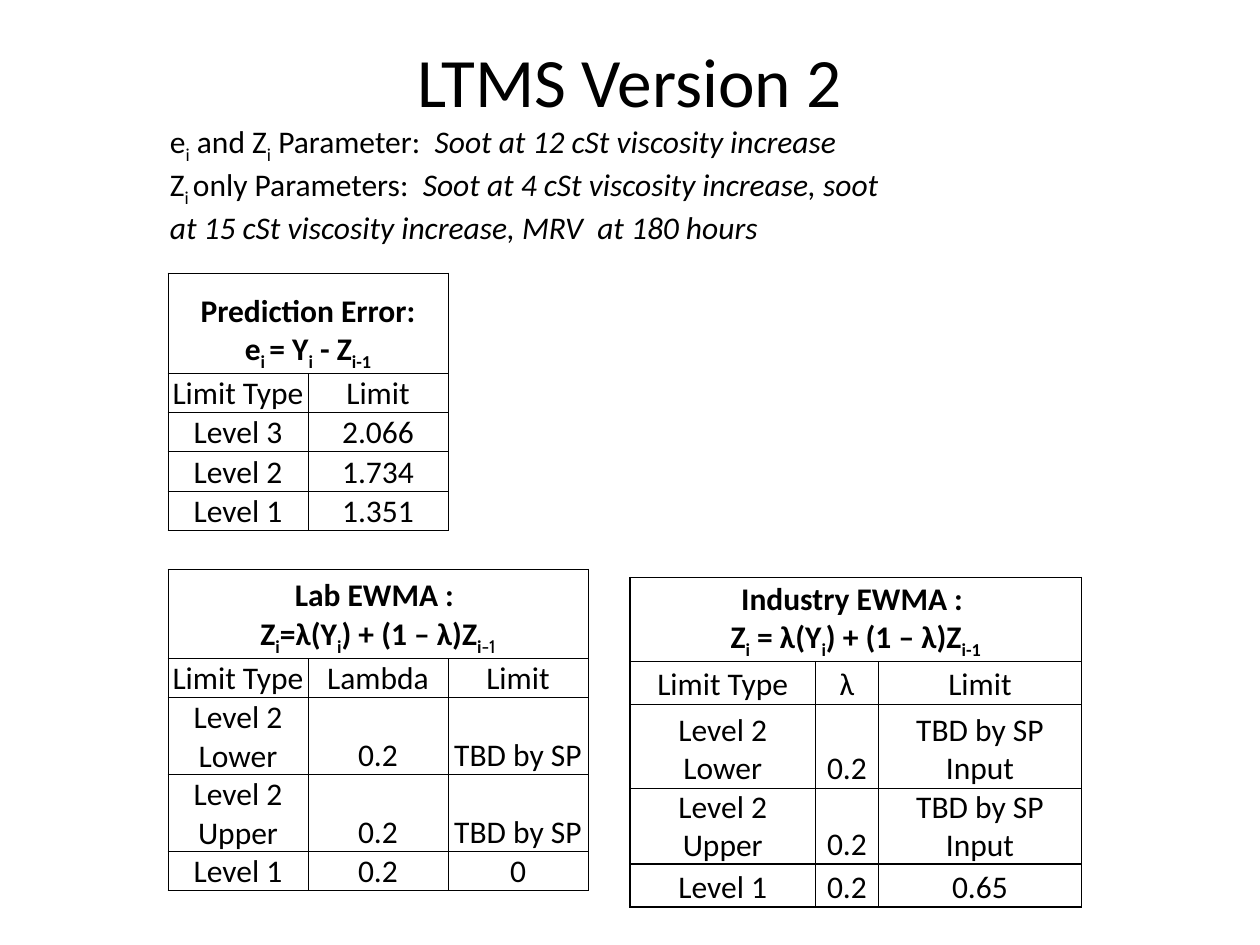
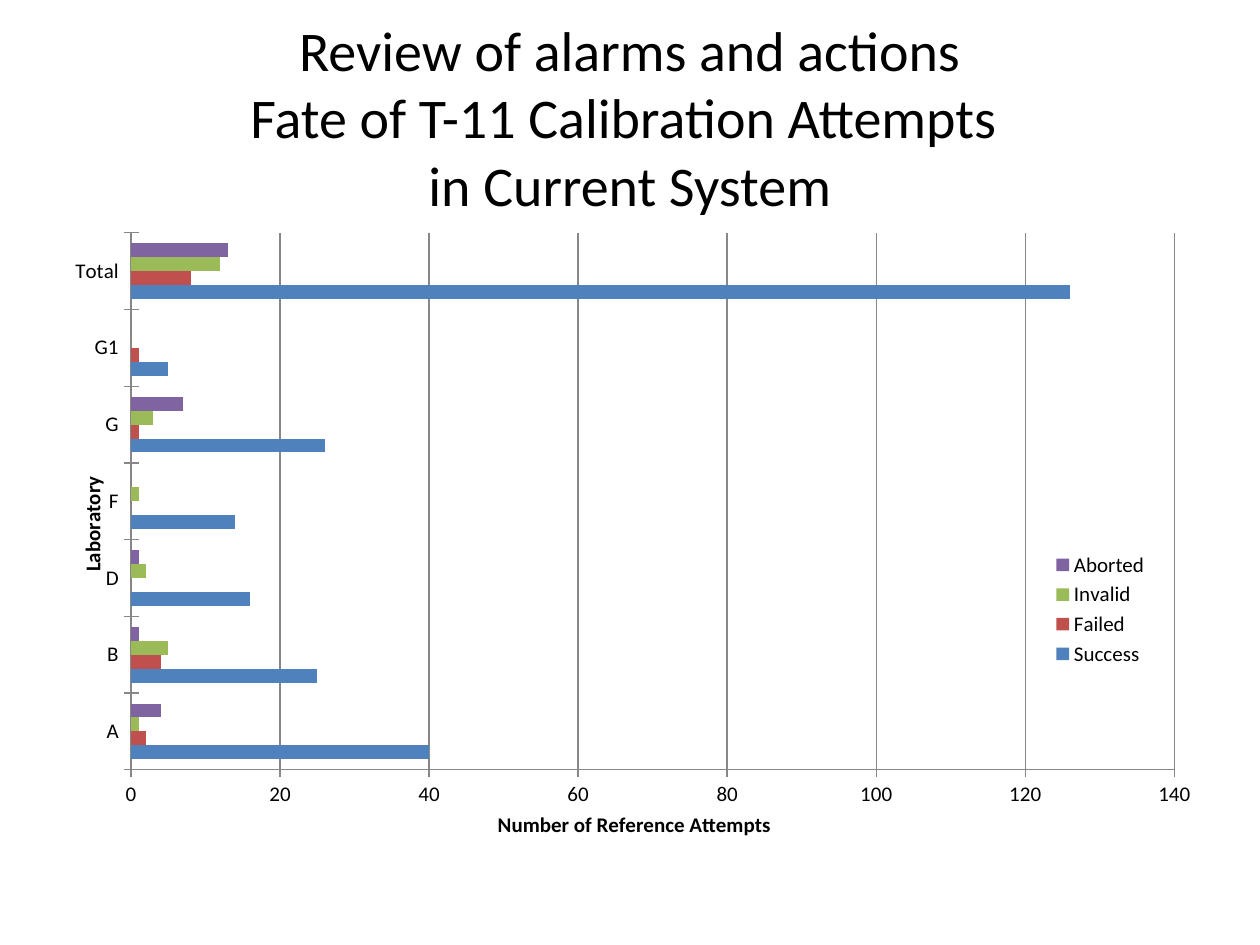
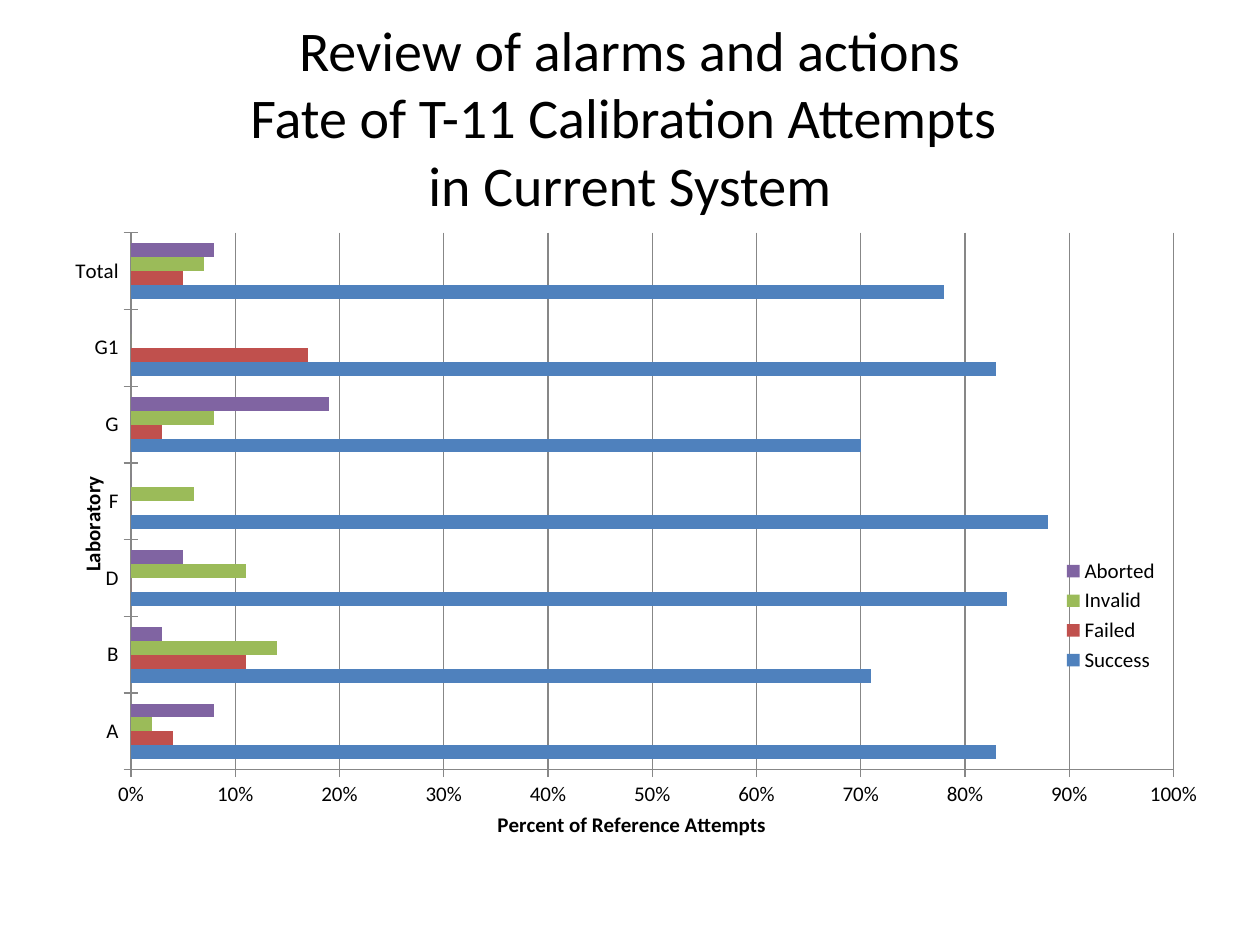
import dataclasses

import pptx
import pptx.chart.data
import pptx.dml.color
import pptx.enum.chart
import pptx.enum.text
import pptx.oxml
import pptx.oxml.ns
import pptx.util

Pt = pptx.util.Pt
Align = pptx.enum.text.PP_ALIGN
Anchor = pptx.enum.text.MSO_ANCHOR

SUBSCRIPT, ITALIC, LIGHT = "~", "*", "^"


@dataclasses.dataclass(frozen=True)
class Theme:
    font: str = "Calibri"
    light_font: str = "Cabin"
    ink: str = "000000"
    grid: str = "878787"
    series: tuple = ("4F81BD", "C0504D", "9BBB59", "8064A2")
    title: float = 39.6
    long_title: float = 32
    body: float = 18
    chart: float = 12


def color(value):
    return pptx.dml.color.RGBColor.from_string(value)


def split_spans(markup):
    active, text = set(), ""
    for letter in markup + SUBSCRIPT:
        if letter not in (SUBSCRIPT, ITALIC, LIGHT):
            text += letter
            continue
        if text:
            yield text, set(active)
        text = ""
        active ^= {letter}


def set_layout(element, index, **fractions):
    namespace = pptx.oxml.ns.nsdecls("c")
    old = element.find(pptx.oxml.ns.qn("c:layout"))
    if old is not None:
        element.remove(old)
    target = '<c:layoutTarget val="inner"/>' if "w" in fractions else ""
    modes = "".join(f'<c:{key}Mode val="edge"/>' for key in "xy")
    values = "".join(f'<c:{key} val="{value}"/>' for key, value in fractions.items())
    element.insert(index, pptx.oxml.parse_xml(
        f"<c:layout {namespace}><c:manualLayout>{target}{modes}{values}"
        "</c:manualLayout></c:layout>"))


class SlideBuilder:
    def __init__(self, theme):
        self.theme = theme
        self.deck = pptx.Presentation()
        self.deck.slide_width, self.deck.slide_height = Pt(720), Pt(540)
        self.page = None

    def add_page(self):
        self.page = self.deck.slides.add_slide(self.deck.slide_layouts[6])

    def style(self, font, size, bold=False):
        font.name, font.size, font.bold = self.theme.font, Pt(size), bold
        font.color.rgb = color(self.theme.ink)

    def fill_text(self, frame, lines, size, align=Align.LEFT, bold=False):
        for number, markup in enumerate(lines):
            para = frame.add_paragraph() if number else frame.paragraphs[0]
            para.alignment = align
            self.style(para.font, size, bold)
            for text, marks in split_spans(markup):
                for part_number, part in enumerate(text.split("\v")):
                    if part_number:
                        para.add_line_break()
                    span = para.add_run()
                    span.text = part
                    if SUBSCRIPT in marks:
                        span.font._element.set("baseline", "-25000")
                    if ITALIC in marks:
                        span.font.italic = True
                    if LIGHT in marks:
                        span.font.name, span.font.bold = self.theme.light_font, False

    def text(self, bounds, lines, size, align=Align.LEFT, anchor=Anchor.TOP, top_inset=3.6):
        box = self.page.shapes.add_textbox(*map(Pt, bounds))
        frame = box.text_frame
        frame.word_wrap = True
        frame.vertical_anchor = anchor
        frame.margin_top = Pt(top_inset)
        self.fill_text(frame, lines, size, align)

    def title(self, text, size, anchor=Anchor.MIDDLE, top_inset=3.6):
        self.text((36, 21.6, 648, 90), [text], size, Align.CENTER, anchor, top_inset)

    def border(self, cell, side, width):
        namespace = pptx.oxml.ns.nsdecls("a")
        fill = "<a:noFill/>"
        if width:
            fill = f'<a:solidFill><a:srgbClr val="{self.theme.ink}"/></a:solidFill>'
        cell._tc.get_or_add_tcPr().append(pptx.oxml.parse_xml(
            f'<a:ln{side} {namespace} w="{Pt(width)}">{fill}</a:ln{side}>'))

    def table(self, left, top, widths, heights, rows, insets, line_width):
        grid = self.page.shapes.add_table(
            len(rows), len(widths), *map(Pt, (left, top, sum(widths), sum(heights)))).table
        grid.first_row = grid.horz_banding = False
        for column, width in zip(grid.columns, widths):
            column.width = Pt(width)
        for row, height in zip(grid.rows, heights):
            row.height = Pt(height)

        def filled(row, column):
            inside = 0 <= row < len(rows) and 0 <= column < len(widths)
            return inside and rows[row][column] != ""

        neighbours = {"L": (0, -1), "R": (0, 1), "T": (-1, 0), "B": (1, 0)}
        for r, row in enumerate(rows):
            for c, content in enumerate(row):
                cell = grid.cell(r, c)
                cell.margin_left = cell.margin_right = Pt(insets[0])
                cell.margin_top, cell.margin_bottom = Pt(insets[1]), 0
                cell.vertical_anchor = Anchor.BOTTOM
                for side, (down, across) in neighbours.items():
                    drawn = filled(r, c) or filled(r + down, c + across)
                    self.border(cell, side, line_width if drawn else 0)
                cell.fill.background()
                if content:
                    heading = isinstance(content, tuple)
                    lines = content if heading else [content]
                    self.fill_text(cell.text_frame, lines, self.theme.body,
                                   Align.CENTER, heading)
            if None in row:
                grid.cell(r, 0).merge(grid.cell(r, row.count(None)))

    def axis(self, axis, title, x, y):
        axis.major_tick_mark = pptx.enum.chart.XL_TICK_MARK.CROSS
        axis.format.line.color.rgb = color(self.theme.grid)
        frame = axis.axis_title.text_frame
        self.fill_text(frame, [title], self.theme.chart, Align.CENTER, True)
        set_layout(axis.axis_title._element, 1, x=x, y=y)
        return frame

    def bar_chart(self, labels, series, value_title, maximum, step, number_format, legend_at):
        data = pptx.chart.data.CategoryChartData(number_format=number_format)
        data.categories = labels
        for name, values in series.items():
            data.add_series(name, values)
        chart = self.page.shapes.add_chart(
            pptx.enum.chart.XL_CHART_TYPE.BAR_CLUSTERED,
            *map(Pt, (36, 126, 648, 356.4)), data).chart
        chart.has_title = False
        self.style(chart.font, self.theme.chart)
        plot = chart.plots[0]
        plot.gap_width, plot.overlap, plot.vary_by_categories = 150, 0, False
        for bars, fill in zip(plot.series, self.theme.series):
            bars.format.fill.solid()
            bars.format.fill.fore_color.rgb = color(fill)
        set_layout(chart._chartSpace.chart.plotArea, 0, x=0.06, y=0.02, w=0.92, h=0.87)

        frame = self.axis(chart.category_axis, "Laboratory", 0.01, 0.41)
        frame._txBody.bodyPr.set("rot", "-5400000")
        frame._txBody.bodyPr.set("vert", "horz")
        values = chart.value_axis
        self.axis(values, value_title, 0.38, 0.95)
        values.minimum_scale, values.maximum_scale, values.major_unit = 0, maximum, step
        values.tick_labels.number_format = number_format
        values.tick_labels.number_format_is_linked = False
        values.has_major_gridlines = True
        values.major_gridlines.format.line.color.rgb = color(self.theme.grid)

        chart.has_legend = True
        chart.legend.position = pptx.enum.chart.XL_LEGEND_POSITION.RIGHT
        chart.legend.include_in_layout = True
        self.style(chart.legend.font, self.theme.chart)
        set_layout(chart.legend._element, 1, x=legend_at[0], y=legend_at[1])


LABORATORIES = ["A", "B", "D", "F", "G", "G1", "Total"]
FATE_TITLE = ("Review of alarms and actions\vFate of T-11 Calibration Attempts "
              "\vin Current System")
ATTEMPTS = {
    "Success": [40, 25, 16, 14, 26, 5, 126],
    "Failed": [2, 4, 0, 0, 1, 1, 8],
    "Invalid": [1, 5, 2, 1, 3, 0, 12],
    "Aborted": [4, 1, 1, 0, 7, 0, 13],
}
SHARES = {
    "Success": [0.83, 0.71, 0.84, 0.88, 0.7, 0.83, 0.78],
    "Failed": [0.04, 0.11, 0, 0, 0.03, 0.17, 0.05],
    "Invalid": [0.02, 0.14, 0.11, 0.06, 0.08, 0, 0.07],
    "Aborted": [0.08, 0.03, 0.05, 0, 0.19, 0, 0.08],
}
LAB_LIMITS = [
    (("Prediction Error:", "e~i ~= Y~i~ - Z~i-1~"), None, ""),
    ("Limit Type", "Limit", ""),
    ("Level 3", "2.066", ""),
    ("Level 2", "1.734", ""),
    ("Level 1", "1.351", ""),
    ("", "", ""),
    (("Lab EWMA : ", "Z~i~=λ(Y~i~) + (1 – λ)Z~i^-1^~"), None, None),
    ("Limit Type", "Lambda", "Limit"),
    ("Level 2 Lower", "0.2", "TBD by SP"),
    ("Level 2 Upper", "0.2", "TBD by SP"),
    ("Level 1", "0.2", "0"),
]
INDUSTRY_LIMITS = [
    (("Industry EWMA : ", "Z~i~ = λ(Y~i~) + (1 – λ)Z~i-1~"), None, None),
    ("Limit Type", "λ", "Limit"),
    ("Level 2 Lower", "0.2", "TBD by SP Input"),
    ("Level 2 Upper", "0.2", "TBD by SP Input"),
    ("Level 1", "0.2", "0.65"),
]


def main():
    theme = Theme()
    builder = SlideBuilder(theme)

    builder.add_page()
    builder.title("LTMS Version 2", theme.title, Anchor.TOP, 0)
    builder.text((90, 66.2, 528, 72.7), [
        "e~i~ and Z~i~ Parameter:  *Soot at 12 cSt viscosity increase*",
        "Z~i ~only Parameters:  *Soot at 4 cSt viscosity increase, soot "
        "\vat 15 cSt viscosity increase, MRV  at 180 hours*",
    ], theme.body)
    builder.table(96, 156, [80] * 3, [57.5] + [19.5] * 5 + [51, 19.5, 39, 39, 19.5],
                  LAB_LIMITS, (0.75, 0.75), 0.5)
    builder.table(360, 330, [106, 36, 116], [48, 24.5, 48, 42.5, 24.5],
                  INDUSTRY_LIMITS, (5, 0), 1)

    for series, value_title, maximum, step, number_format, legend_at in (
        (ATTEMPTS, "Number of Reference Attempts", 140, 20, "General", (0.87, 0.53)),
        (SHARES, "Percent of Reference Attempts", 1, 0.1, "0%", (0.88, 0.54)),
    ):
        builder.add_page()
        builder.title(FATE_TITLE, theme.long_title)
        builder.bar_chart(LABORATORIES, series, value_title, maximum, step,
                          number_format, legend_at)

    builder.deck.save("out.pptx")


if __name__ == "__main__":
    main()
